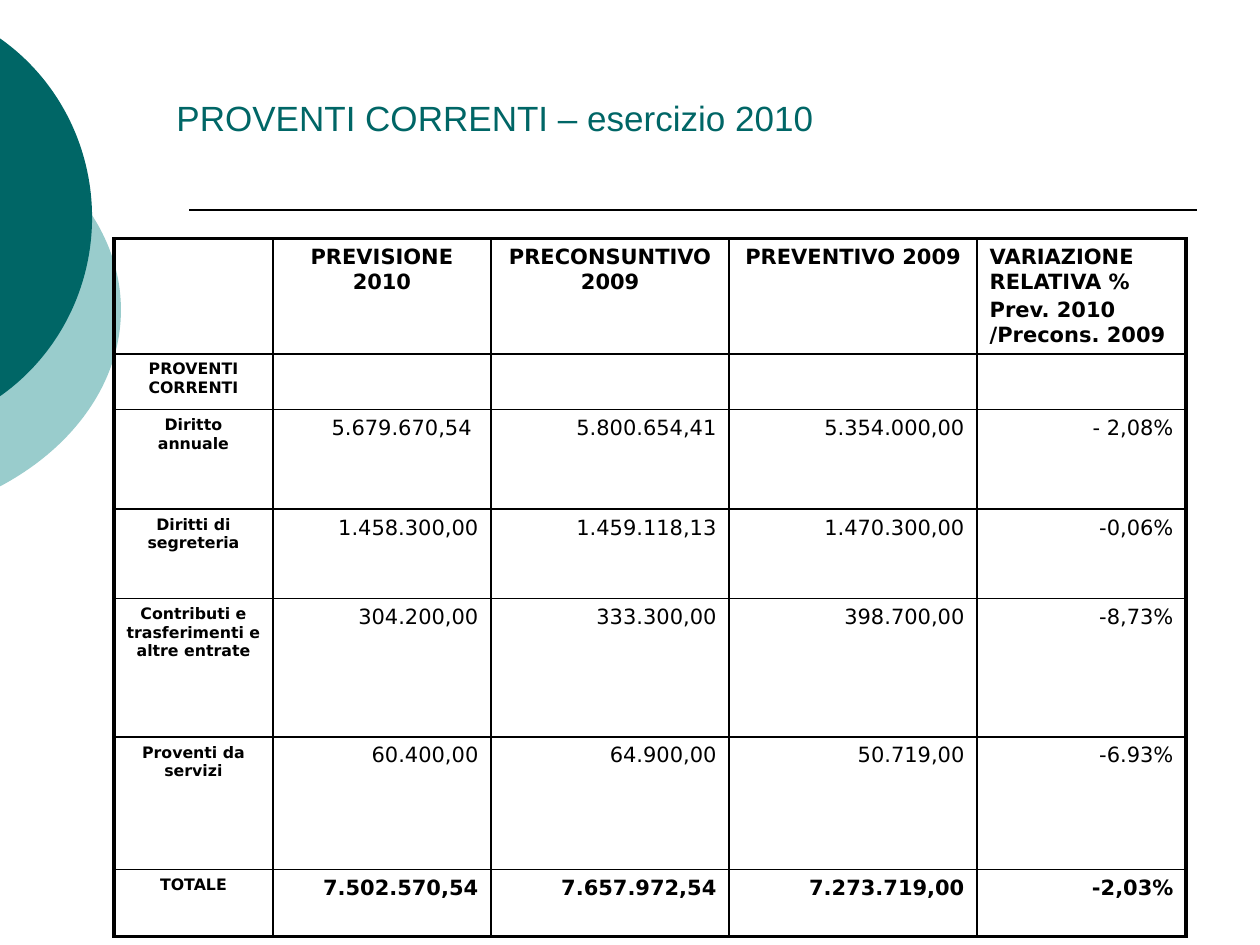
from dataclasses import dataclass

from lxml.etree import SubElement
from pptx import Presentation
from pptx.dml.color import RGBColor as RGB
from pptx.enum.shapes import MSO_CONNECTOR as CONN, MSO_SHAPE as SHAPE
from pptx.enum.text import MSO_ANCHOR as ANCHOR, PP_ALIGN as ALIGN
from pptx.oxml.ns import qn
from pptx.util import Pt


@dataclass(frozen=True)
class Theme:
    """Colours, fonts, type sizes and line widths."""
    dark: RGB = RGB(0x00, 0x66, 0x66)
    light: RGB = RGB(0x99, 0xCC, 0xCC)
    ink: RGB = RGB(0x00, 0x00, 0x00)
    title_font: str = "Arial"
    table_font: str = "DejaVu Sans"
    title_size: float = 20
    cell_size: float = 12
    label_size: float = 9
    thin: float = 1
    thick: float = 2.25


THEME = Theme()
COLS = [90.8, 124.7, 136.1, 141.7, 119.4]
ROW_HEIGHTS = [53.3, 31.8, 56.9, 51.1, 79.2, 75.6, 38.2]
HEADERS = [
    "",
    "PREVISIONE 2010",
    "PRECONSUNTIVO 2009",
    "PREVENTIVO 2009",
    "VARIAZIONE RELATIVA %\nPrev. 2010 /Precons. 2009",
]
ROWS = [
    HEADERS,
    ["PROVENTI CORRENTI", "", "", "", ""],
    ["Diritto annuale", "5.679.670,54 ", "5.800.654,41", "5.354.000,00", "- 2,08%"],
    ["Diritti di segreteria", "1.458.300,00", "1.459.118,13", "1.470.300,00", "-0,06%"],
    ["Contributi e trasferimenti e altre entrate",
     "304.200,00", "333.300,00", "398.700,00", "-8,73%"],
    ["Proventi da servizi", "60.400,00", "64.900,00", "50.719,00", "-6.93%"],
    ["TOTALE", "7.502.570,54", "7.657.972,54", "7.273.719,00", "-2,03%"],
]


def add_disc(s, box, color):
    """Draw a plain disc that bleeds over the left slide edge."""
    sp = s.shapes.add_shape(SHAPE.OVAL, *map(Pt, box))
    sp.shadow.inherit = False
    sp.fill.solid()
    sp.fill.fore_color.rgb = color
    sp.line.fill.background()


def add_rule(s, left, top, width):
    """Draw the horizontal rule under the title."""
    line = s.shapes.add_connector(
        CONN.STRAIGHT, Pt(left), Pt(top), Pt(left + width), Pt(top))
    line.line.color.rgb = THEME.ink
    line.line.width = Pt(THEME.thin)
    SubElement(line._element.spPr, qn("a:effectLst"))


def add_run(p, text, font, size, color, bold=False):
    """Add one formatted run to a paragraph."""
    r = p.add_run()
    r.text = text
    r.font.name = font
    r.font.size = Pt(size)
    r.font.bold = bold
    r.font.color.rgb = color


def fill_title(s, text, box):
    """Place the title placeholder in the box and write its text."""
    sp = s.shapes.title
    sp.left, sp.top, sp.width, sp.height = map(Pt, box)
    tf = sp.text_frame
    tf.word_wrap = True
    tf.vertical_anchor = ANCHOR.BOTTOM
    p = tf.paragraphs[0]
    p.alignment = ALIGN.LEFT
    add_run(p, text, THEME.title_font, THEME.title_size, THEME.dark)


def set_borders(cell, outer):
    """Give a cell its four borders, thick on the outer sides."""
    tc_pr = cell._tc.get_or_add_tcPr()
    for side in "LRTB":
        width = THEME.thick if side in outer else THEME.thin
        ln = SubElement(tc_pr, qn(f"a:ln{side}"), w=str(Pt(width)))
        fill = SubElement(ln, qn("a:solidFill"))
        SubElement(fill, qn("a:srgbClr"), val=str(THEME.ink))


def fill_cell(cell, text, size, bold, align):
    """Write the paragraphs of one cell."""
    tf = cell.text_frame
    for i, part in enumerate(text.split("\n")):
        p = tf.add_paragraph() if i else tf.paragraphs[0]
        p.alignment = align
        p.space_before = Pt(size * 0.2)
        if part:
            add_run(p, part, THEME.table_font, size, THEME.ink, bold)
        else:
            p.font.size = Pt(size)


def add_income_table(s, left, top):
    """Build the table of current income."""
    last_row, last_col = len(ROWS) - 1, len(COLS) - 1
    frame = s.shapes.add_table(len(ROWS), len(COLS), Pt(left), Pt(top),
                               Pt(sum(COLS)), Pt(sum(ROW_HEIGHTS)))
    table = frame.table
    table.first_row = table.horz_banding = False
    for column, width in zip(table.columns, COLS):
        column.width = Pt(width)
    for row, height in zip(table.rows, ROW_HEIGHTS):
        row.height = Pt(height)
    for i, values in enumerate(ROWS):
        for j, text in enumerate(values):
            cell = table.cell(i, j)
            edges = {"L": j == 0, "R": j == last_col, "T": i == 0, "B": i == last_row}
            set_borders(cell, [side for side, is_outer in edges.items() if is_outer])
            cell.fill.background()
            size = THEME.label_size if j == 0 else THEME.cell_size
            bold = j == 0 or i in (0, last_row)
            if i == 0 and j == last_col:
                align = ALIGN.LEFT
            else:
                align = ALIGN.CENTER if i == 0 or j == 0 else ALIGN.RIGHT
            fill_cell(cell, text, size, bold, align)


def build_income_slide(prs):
    """Build the current income slide."""
    s = prs.slides.add_slide(prs.slide_layouts[5])
    add_disc(s, (-254.9, 54, 324, 246.2), THEME.light)
    add_disc(s, (-190.8, 0, 243.4, 248.4), THEME.dark)
    add_rule(s, 108, 120.2, 576)
    fill_title(s, "PROVENTI CORRENTI – esercizio 2010", (93.6, 23.8, 590.4, 59))
    add_income_table(s, 65.1, 136.4)


def main():
    """Create the presentation and save it."""
    prs = Presentation()
    prs.slide_width, prs.slide_height = Pt(720), Pt(540)
    build_income_slide(prs)
    prs.save("out.pptx")


if __name__ == "__main__":
    main()
